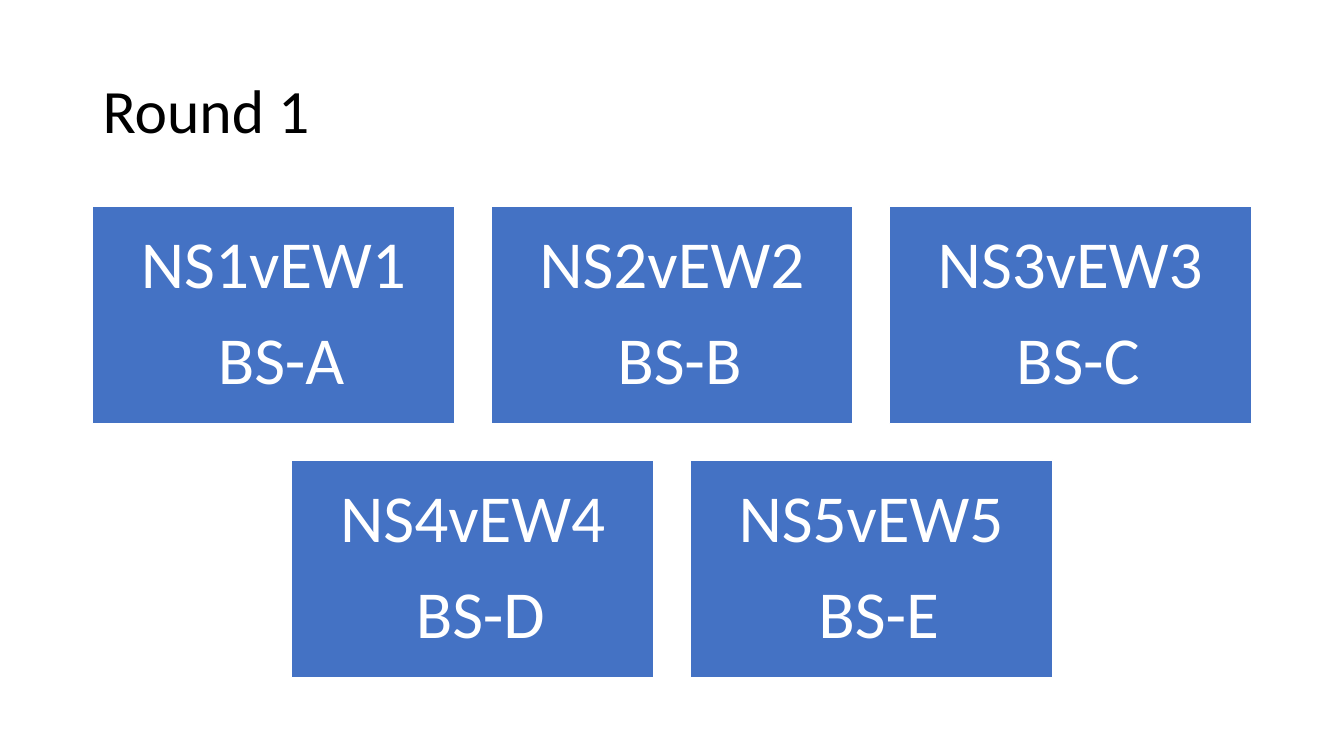
from pptx import Presentation
from pptx.dml.color import RGBColor
from pptx.enum.shapes import MSO_SHAPE
from pptx.enum.text import MSO_ANCHOR, MSO_AUTO_SIZE, PP_ALIGN
from pptx.util import Cm, Pt

COLORS = {"text": "000000", "box": "4472C4", "white": "FFFFFF"}
FONT = "Calibri"
SLIDE_W, SLIDE_H = 33.87, 19.05
BOX_W, BOX_H, GAP = 9.13, 5.48, 0.91
TOP = 5.19
ROWS = [
    [("NS1vEW1", " BS-A"), ("NS2vEW2", " BS-B"), ("NS3vEW3", " BS-C")],
    [("NS4vEW4", " BS-D"), ("NS5vEW5", " BS-E")],
]


def add_run(p, text, size, color):
    p.line_spacing = 0.9
    r = p.add_run()
    r.text = text
    r.font.name = FONT
    r.font.size = Pt(size)
    r.font.color.rgb = RGBColor.from_string(COLORS[color])


prs = Presentation()
prs.slide_width, prs.slide_height = Cm(SLIDE_W), Cm(SLIDE_H)
s = prs.slides.add_slide(prs.slide_layouts[5])

title = s.shapes.title
title.left, title.top = Cm(2.33), Cm(1.01)
title.width, title.height = Cm(29.21), Cm(3.68)
tf = title.text_frame
tf.auto_size = MSO_AUTO_SIZE.NONE
tf.vertical_anchor = MSO_ANCHOR.MIDDLE
p = tf.paragraphs[0]
p.alignment = PP_ALIGN.LEFT
add_run(p, "Round 1", 44, "text")

for row, matches in enumerate(ROWS):
    row_w = len(matches) * (BOX_W + GAP) - GAP
    left = (SLIDE_W - row_w) / 2
    top = TOP + row * (BOX_H + GAP + 0.01)
    for col, lines in enumerate(matches):
        sp = s.shapes.add_shape(
            MSO_SHAPE.RECTANGLE,
            Cm(left + col * (BOX_W + GAP)), Cm(top), Cm(BOX_W), Cm(BOX_H),
        )
        sp.shadow.inherit = False
        sp.fill.solid()
        sp.fill.fore_color.rgb = RGBColor.from_string(COLORS["box"])
        sp.line.color.rgb = RGBColor.from_string(COLORS["white"])
        sp.line.width = Pt(1)
        tf = sp.text_frame
        tf.word_wrap = True
        tf.vertical_anchor = MSO_ANCHOR.MIDDLE
        tf.margin_left = tf.margin_right = Cm(0.51)
        tf.margin_top = tf.margin_bottom = Cm(0.51)
        for i, text in enumerate(lines):
            p = tf.add_paragraph() if i else tf.paragraphs[0]
            p.alignment = PP_ALIGN.CENTER
            p.space_after = Pt(16.8)
            add_run(p, text, 48, "white")

prs.save("out.pptx")
